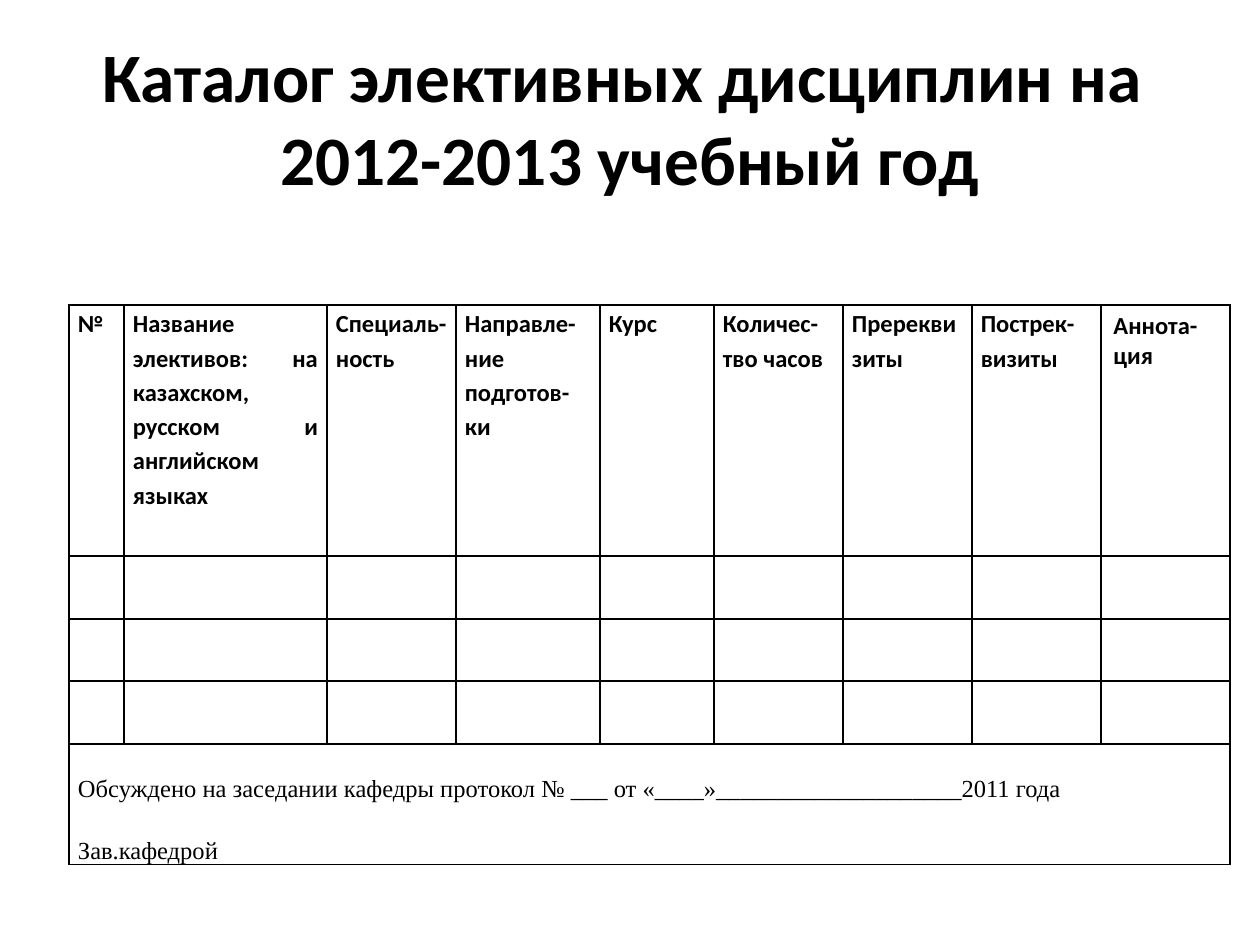
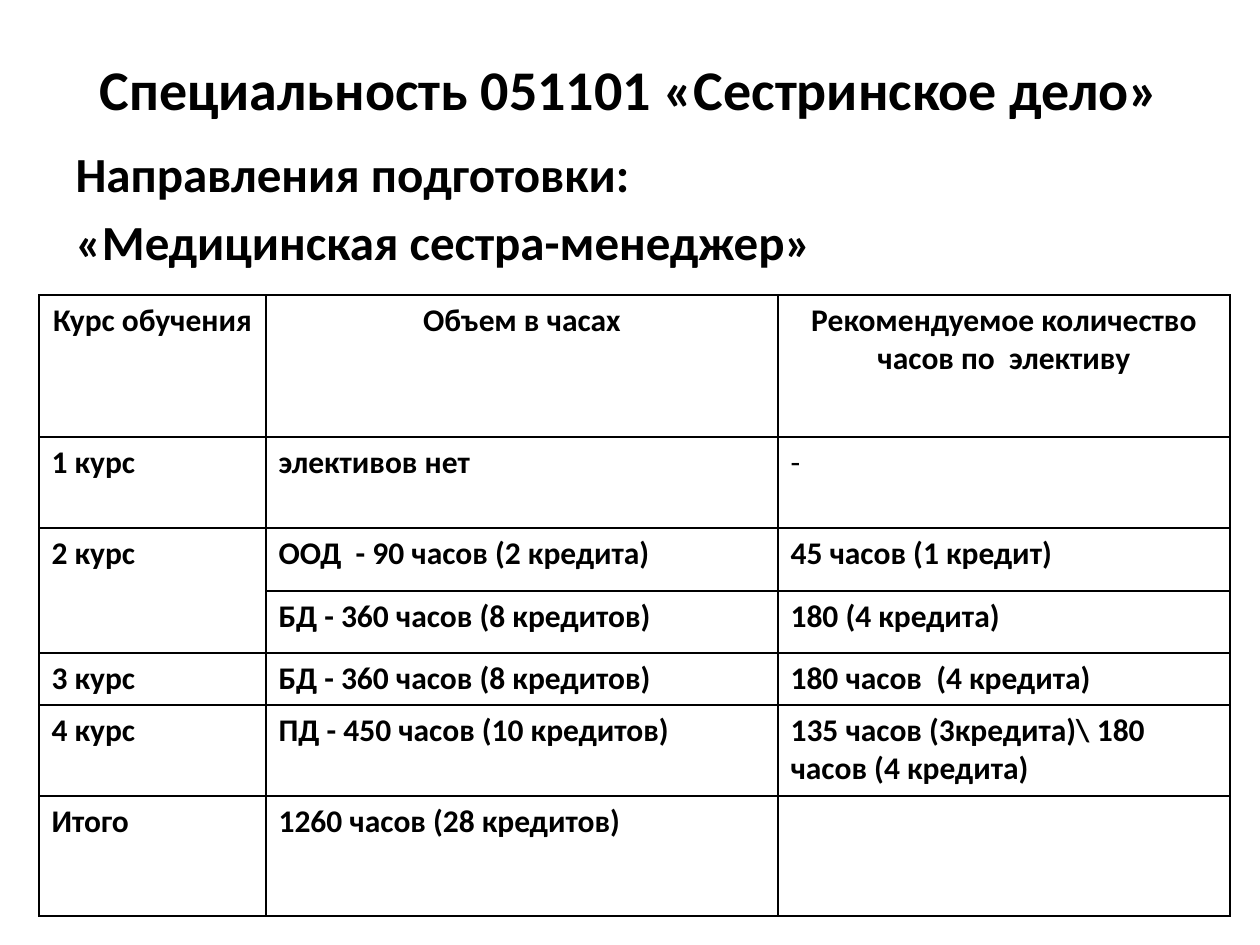
from dataclasses import dataclass

from lxml import etree
from pptx import Presentation
from pptx import util as u
from pptx.dml.color import RGBColor
from pptx.enum import text
from pptx.oxml.ns import qn

ALIGN = text.PP_ALIGN


@dataclass(frozen=True)
class Theme:
    """Colours, fonts and type sizes in points."""
    ink: str = "000000"
    paper: str = "FFFFFF"
    font: str = "Calibri"
    form_font: str = "Times New Roman"
    title: float = 39.6
    subject: float = 32
    lead: float = 28
    plan: float = 18
    catalog: float = 14
    rule: float = 1


def px(length):
    """Convert pixels to EMU."""
    return u.Emu(round(length * 914400 / 126))


class Deck:
    """Holds the theme and the current slide."""

    def __init__(self, theme):
        """Open an empty presentation."""
        self.theme = theme
        self.show = Presentation()
        self.show.slide_width, self.show.slide_height = px(1260), px(945)

    def page(self, layout):
        """Start a slide on the given layout."""
        self.slide = self.show.slides.add_slide(self.show.slide_layouts[layout])
        backdrop = self.slide.background.fill
        backdrop.solid()
        backdrop.fore_color.rgb = RGBColor.from_string(self.theme.paper)

    def style(self, frame, size, align=ALIGN.LEFT, bold=True, font=None, spacing=None):
        """Format every paragraph and run of a text frame."""
        for line in frame.paragraphs:
            line.alignment = align
            if spacing:
                line.line_spacing = spacing
            for run in line.runs:
                run.font.size = u.Pt(size)
                run.font.name = font or self.theme.font
                run.font.bold = bold
                run.font.color.rgb = RGBColor.from_string(self.theme.ink)

    def place(self, holder, box, words):
        """Move a placeholder and fill it."""
        holder.left, holder.top, holder.width, holder.height = map(px, box)
        frame = holder.text_frame
        frame.word_wrap = True
        frame.auto_size = text.MSO_AUTO_SIZE.NONE
        frame.text = words
        return frame

    def title(self, box, words, size):
        """Write the centred slide title."""
        frame = self.place(self.slide.shapes.title, box, words)
        frame.vertical_anchor = text.MSO_ANCHOR.MIDDLE
        self.style(frame, size, ALIGN.CENTER)

    def body(self, box, words, size, hang):
        """Write body lines with a hanging indent and no bullets."""
        frame = self.place(self.slide.placeholders[1], box, words)
        self.style(frame, size)
        for line in frame.paragraphs:
            props = line._p.get_or_add_pPr()
            props.set("marL", str(px(hang)))
            props.set("indent", str(-px(hang)))
            etree.SubElement(props, qn("a:buNone"))

    def rule(self, cell):
        """Draw the four borders of a cell and clear its fill."""
        props = cell._tc.get_or_add_tcPr()
        for side in ("lnL", "lnR", "lnT", "lnB"):
            edge = etree.SubElement(props, qn(f"a:{side}"), w=str(u.Pt(self.theme.rule)))
            paint = etree.SubElement(edge, qn("a:solidFill"))
            etree.SubElement(paint, qn("a:srgbClr"), val=self.theme.ink)
        cell.fill.background()

    def table(self, corner, widths, heights, rows, size, **look):
        """Add a ruled table and fill it from the top row down."""
        left, top = corner
        grid = self.slide.shapes.add_table(
            len(heights), len(widths), px(left), px(top), px(sum(widths)), px(sum(heights))).table
        grid.first_row = grid.horz_banding = False
        for column, width in zip(grid.columns, widths):
            column.width = px(width)
        for row, height in zip(grid.rows, heights):
            row.height = px(height)
        for cell in grid.iter_cells():
            self.rule(cell)
        for r, row in enumerate(rows):
            for c, words in enumerate(row):
                if words:
                    cell = grid.cell(r, c)
                    cell.text = words
                    self.style(cell.text_frame, size, **look)
        return grid


def tighten(cell):
    """Give a cell narrow side margins and none above or below."""
    cell.margin_left = cell.margin_right = px(9)
    cell.margin_top = cell.margin_bottom = 0


def catalog_page(deck):
    """Build the blank catalogue form."""
    theme = deck.theme
    deck.page(5)
    deck.title((63, 38, 1134, 157),
               "Каталог элективных дисциплин на \v2012-2013 учебный год", theme.title)
    headings = ["№", "Название элективов: на казахском, русском и английском языках",
                "Специаль-\nность", "Направле-\nние подготов-ки", "Курс ",
                "Количес-тво часов", "Пререквизиты", "Пострек-визиты", "Аннота-ция"]
    form = deck.table((69, 305), [55, 203, 129, 144, 114] + [129] * 4,
                      [251, 63, 62, 63, 120], [headings], theme.catalog,
                      align=ALIGN.JUSTIFY, spacing=1.15)
    for c in range(len(headings) - 1):
        tighten(form.cell(0, c))
    deck.style(form.cell(0, len(headings) - 1).text_frame, theme.catalog, spacing=1.0)

    approval = form.cell(4, 0)
    approval.merge(form.cell(4, len(headings) - 1))
    tighten(approval)
    approval.margin_top = px(28)
    approval.text = ("Обсуждено на заседании кафедры протокол № ___ от "
                     "«____»____________________2011 года\nЗав.кафедрой")
    deck.style(approval.text_frame, theme.catalog, ALIGN.JUSTIFY, False, theme.form_font, 1.15)
    approval.text_frame.paragraphs[1].space_before = u.Pt(17.5)


def nursing_page(deck):
    """Build the elective hours of the nursing speciality."""
    theme = deck.theme
    deck.page(1)
    deck.title((63, 29, 1134, 118), "Специальность 051101 «Сестринское дело»", theme.subject)
    deck.body((63, 137, 1134, 707),
              "Направления подготовки:\n«Медицинская сестра-менеджер»", theme.lead, 48)
    rows = [
        ["Курс обучения", "Объем в часах", "Рекомендуемое количество часов по  элективу"],
        ["1 курс", "элективов нет", "-"],
        ["2 курс", "ООД  - 90 часов (2 кредита)", "45 часов (1 кредит)"],
        ["", "БД - 360 часов (8 кредитов)", "180 (4 кредита)"],
        ["3 курс", "БД - 360 часов (8 кредитов)", "180 часов  (4 кредита)"],
        ["4 курс", "ПД - 450 часов (10 кредитов)", "135 часов (3кредита)\\ 180 часов (4 кредита)"],
        ["Итого", "1260 часов (28 кредитов)", ""],
    ]
    hours = deck.table((39, 295), [227, 512, 452], [142, 91, 63, 62, 52, 91, 120],
                       rows, theme.plan)
    hours.cell(2, 0).merge(hours.cell(3, 0))
    for c in range(len(rows[0])):
        deck.style(hours.cell(0, c).text_frame, theme.plan, ALIGN.CENTER)
    deck.style(hours.cell(1, 2).text_frame, theme.plan, bold=False)


def main():
    """Build both slides and save them."""
    deck = Deck(Theme())
    catalog_page(deck)
    nursing_page(deck)
    deck.show.save("out.pptx")


if __name__ == "__main__":
    main()
